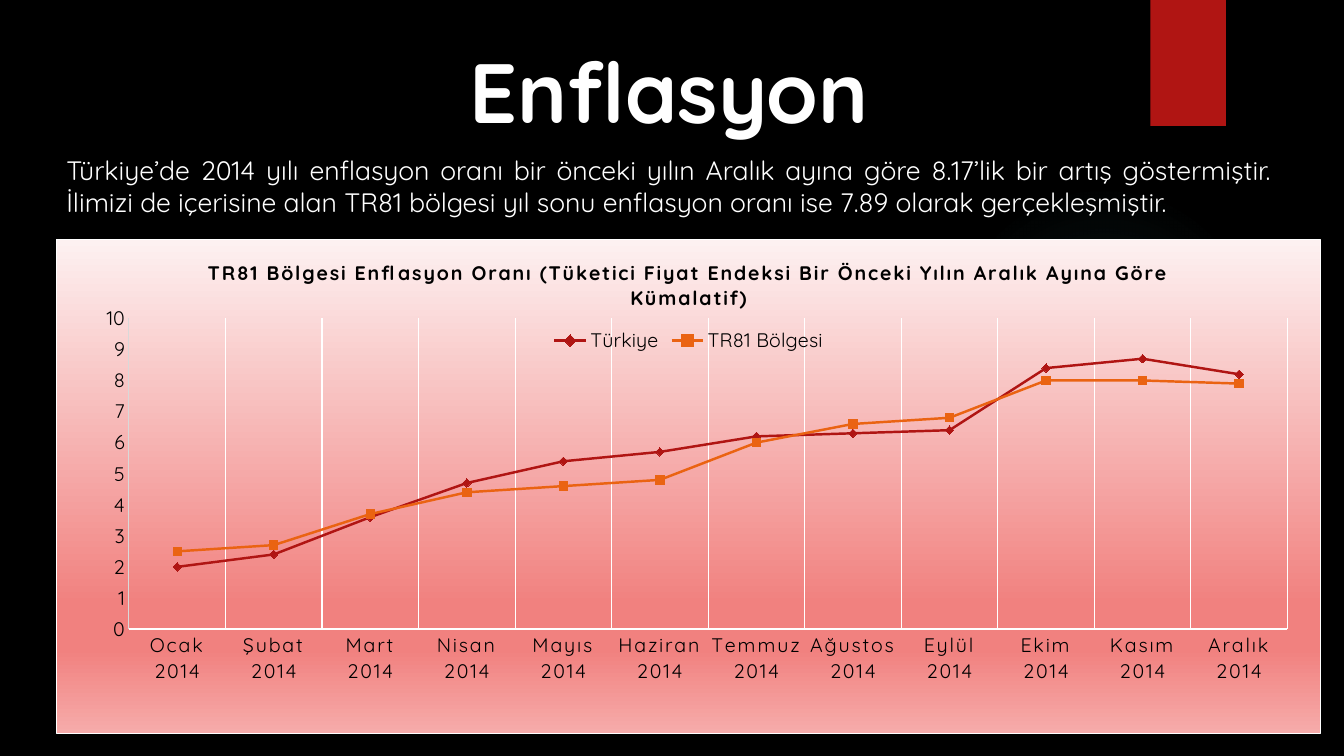
from lxml.etree import fromstring
from pptx import Presentation
from pptx.chart.data import CategoryChartData
from pptx.dml.color import RGBColor
from pptx.enum.chart import XL_CHART_TYPE, XL_LEGEND_POSITION, XL_MARKER_STYLE, XL_TICK_MARK
from pptx.enum.shapes import MSO_SHAPE
from pptx.enum.text import MSO_ANCHOR, MSO_AUTO_SIZE, PP_ALIGN
from pptx.oxml.ns import nsdecls, qn
from pptx.util import Inches, Pt

FONT = "Quicksand"
BLACK = RGBColor(0x00, 0x00, 0x00)
WHITE = RGBColor(0xFF, 0xFF, 0xFF)
GREY = RGBColor(0xD9, 0xD9, 0xD9)
RED = RGBColor(0xB0, 0x15, 0x13)
ORANGE = RGBColor(0xEA, 0x63, 0x12)
TEAL = RGBColor(0x50, 0xB9, 0xC1)
PINKS = [(0, RGBColor(0xFD, 0xF1, 0xF1)), (74, RGBColor(0xF1, 0x81, 0x7F)),
         (83, RGBColor(0xF1, 0x81, 0x7F)), (100, RGBColor(0xF6, 0xAB, 0xAA))]
GLOW = [(0, 7), (36, 6), (69, 0)]

MONTHS = ["Ocak", "Şubat", "Mart", "Nisan", "Mayıs", "Haziran", "Temmuz",
          "Ağustos", "Eylül", "Ekim", "Kasım", "Aralık"]
INFLATION = [
    ("Türkiye", [2, 2.4, 3.6, 4.7, 5.4, 5.7, 6.2, 6.3, 6.4, 8.4, 8.7, 8.2],
     RED, XL_MARKER_STYLE.DIAMOND),
    ("TR81 Bölgesi", [2.5, 2.7, 3.7, 4.4, 4.6, 4.8, 6, 6.6, 6.8, 8, 8, 7.9],
     ORANGE, XL_MARKER_STYLE.SQUARE),
]
CHART_TITLE = ("TR81 Bölgesi Enflasyon Oranı (Tüketici Fiyat Endeksi "
               "Bir Önceki Yılın Aralık Ayına Göre Kümalatif)")
SUMMARY = ("Türkiye’de 2014 yılı enflasyon oranı bir önceki yılın Aralık ayına göre "
           "8.17’lik bir artış göstermiştir. İlimizi de içerisine alan TR81 bölgesi "
           "yıl sonu enflasyon oranı ise 7.89 olarak gerçekleşmiştir.")


def style(font, size, color, bold=False):
    font.name, font.size, font.bold = FONT, Pt(size), bold
    font.color.rgb = color


def gradient_xml(stops, direction):
    """Gradient of (position %, colour, opacity %) stops."""
    stop_xml = "".join(
        f'<a:gs pos="{pos * 1000}"><a:srgbClr val="{color}">'
        f'<a:alpha val="{opacity * 1000}"/></a:srgbClr></a:gs>'
        for pos, color, opacity in stops)
    return (f'<a:gradFill {nsdecls("a")} rotWithShape="1">'
            f'<a:gsLst>{stop_xml}</a:gsLst>{direction}</a:gradFill>')


def layout_element(x, y, w, h, inner=False):
    """Manual chart layout, in shares of the chart's size."""
    target = '<c:layoutTarget val="inner"/>' if inner else ""
    return fromstring(
        f'<c:layout {nsdecls("c")}><c:manualLayout>{target}'
        '<c:xMode val="edge"/><c:yMode val="edge"/>'
        f'<c:x val="{x}"/><c:y val="{y}"/><c:w val="{w}"/><c:h val="{h}"/>'
        '</c:manualLayout></c:layout>')


def add_backdrop(slide, width, height):
    """Black background, faint round glow and red ribbon."""
    slide.background.fill.solid()
    slide.background.fill.fore_color.rgb = BLACK
    glow_size = Inches(3.08)
    glow = slide.shapes.add_shape(MSO_SHAPE.OVAL, Inches(9.41), Inches(1.83),
                                  glow_size, glow_size)
    ribbon = slide.shapes.add_shape(MSO_SHAPE.RECTANGLE, Inches(11.41), 0,
                                    Inches(0.75), height // 6)
    for decoration in (glow, ribbon):
        decoration.shadow.inherit = False
        decoration.line.fill.background()
    ribbon.fill.solid()
    ribbon.fill.fore_color.rgb = RED
    radial = ('<a:path path="circle"><a:fillToRect l="50000" t="50000" '
              'r="50000" b="50000"/></a:path>')
    stops = [(pos, TEAL, opacity) for pos, opacity in GLOW]
    glow_geometry = glow.element.spPr.find(qn("a:prstGeom"))
    glow_geometry.addnext(fromstring(gradient_xml(stops, radial)))


def add_heading(slide, left, top, width):
    title = slide.shapes.title
    title.left, title.top, title.width, title.height = left, top, width, Inches(1.14)
    summary = slide.shapes.add_textbox(left, top + title.height, width, Inches(0.78))
    for box, text, size, bold, align in (
            (title, SLIDE_TITLE, 60, True, PP_ALIGN.CENTER),
            (summary, SUMMARY, 19, False, PP_ALIGN.JUSTIFY)):
        frame = box.text_frame
        frame.text = text
        frame.word_wrap = True
        frame.auto_size = MSO_AUTO_SIZE.NONE
        frame.vertical_anchor = MSO_ANCHOR.TOP
        paragraph = frame.paragraphs[0]
        paragraph.alignment = align
        paragraph.line_spacing = 1.0
        paragraph.space_before = Pt(0)
        style(paragraph.runs[0].font, size, WHITE, bold)


def format_axes(chart):
    months, rates = chart.category_axis, chart.value_axis
    for axis, line_color in ((months, WHITE), (rates, GREY)):
        axis.major_tick_mark = axis.minor_tick_mark = XL_TICK_MARK.NONE
        axis.format.line.color.rgb = line_color
        axis.format.line.width = Pt(0.75)
        style(axis.tick_labels.font, 14, BLACK)
    months.has_major_gridlines = True
    months.major_gridlines.format.line.color.rgb = WHITE
    months.major_gridlines.format.line.width = Pt(0.75)
    months.tick_labels.font._element.set("spc", "120")
    rates.has_major_gridlines = False
    rates.minimum_scale, rates.maximum_scale, rates.major_unit = 0, 10, 1
    rates.tick_labels.number_format = "General"
    rates.tick_labels.number_format_is_linked = False


def format_panel(chart):
    """Pink gradient panel with a white border, and the inner plot box."""
    down = '<a:lin ang="5400000" scaled="0"/>'
    pinks = gradient_xml([(pos, color, 100) for pos, color in PINKS], down)
    panel = fromstring(
        f'<c:spPr {nsdecls("c", "a")}>{pinks}<a:ln w="{Pt(0.75)}"><a:solidFill>'
        f'<a:srgbClr val="{WHITE}"/></a:solidFill></a:ln></c:spPr>')
    chart_part = chart.element.find(qn("c:chart"))
    chart_part.addnext(panel)
    plot_area = chart_part.find(qn("c:plotArea"))
    for default_layout in plot_area.findall(qn("c:layout")):
        plot_area.remove(default_layout)
    plot_area.insert(0, layout_element(0.057, 0.16, 0.917, 0.629, inner=True))


def add_inflation_chart(slide, left, top, width, height):
    data = CategoryChartData()
    data.categories = [f"{month} 2014" for month in MONTHS]
    for name, rates, _, _ in INFLATION:
        data.add_series(name, rates)
    chart = slide.shapes.add_chart(XL_CHART_TYPE.LINE_MARKERS, left, top,
                                   width, height, data).chart
    style(chart.font, 10, BLACK)
    chart.has_title = True
    chart.chart_title.text_frame.text = CHART_TITLE
    title_run = chart.chart_title.text_frame.paragraphs[0].runs[0]
    style(title_run.font, 14, BLACK, bold=True)
    title_run.font._element.set("spc", "120")

    chart.has_legend = True
    legend = chart.legend
    legend.position = XL_LEGEND_POSITION.TOP
    legend.include_in_layout = False
    style(legend.font, 14, BLACK)
    legend_position = legend._element.find(qn("c:legendPos"))
    legend_position.addnext(layout_element(0.386, 0.175, 0.222, 0.055))

    chart.plots[0].vary_by_categories = False
    for series, (_, _, color, marker_style) in zip(chart.plots[0].series, INFLATION):
        series.smooth = False
        series.format.line.color.rgb = color
        series.format.line.width = Pt(1.75)
        marker = series.marker
        marker.style, marker.size = marker_style, 6
        marker.format.fill.solid()
        marker.format.fill.fore_color.rgb = color
        marker.format.line.color.rgb = color
    format_axes(chart)
    format_panel(chart)


SLIDE_TITLE = "Enflasyon"


def main():
    deck = Presentation()
    deck.slide_width, deck.slide_height = Inches(13.33), Inches(7.5)
    slide = deck.slides.add_slide(deck.slide_layouts[5])
    left = Inches(0.56)
    add_backdrop(slide, deck.slide_width, deck.slide_height)
    add_heading(slide, left, Inches(0.34), Inches(12.15))
    add_inflation_chart(slide, left, Inches(2.37), Inches(12.54), Inches(4.91))
    deck.save("out.pptx")


if __name__ == "__main__":
    main()
